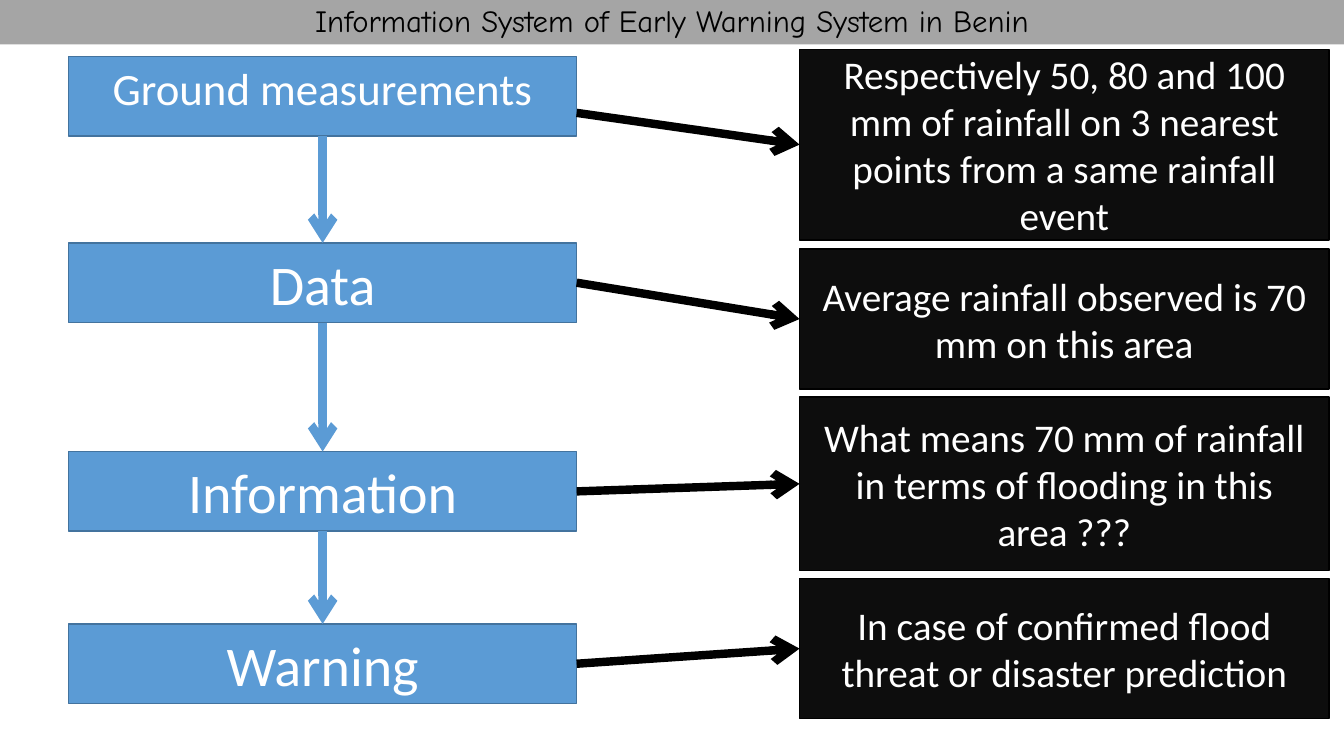
from dataclasses import dataclass

from lxml import etree
from pptx import Presentation
from pptx.dml.color import RGBColor
from pptx.enum import shapes as sh, text as tx
from pptx.oxml import ns
from pptx.util import Inches, Pt

BLUE = RGBColor(0x5B, 0x9B, 0xD5)
BLUE_EDGE = RGBColor(0x43, 0x73, 0x9E)
NEAR_BLACK = RGBColor(0x0D, 0x0D, 0x0D)
BLACK = RGBColor(0, 0, 0)
GREY = RGBColor(0xA5, 0xA5, 0xA5)
WHITE = RGBColor(0xFF, 0xFF, 0xFF)

STEP_LEFT, STEP_WIDTH, STEP_HEIGHT = 0.68, 5.04, 0.79
NOTE_LEFT, NOTE_WIDTH = 7.93, 5.25
TOP, LEFT, BOTTOM, RIGHT = range(4)


@dataclass(frozen=True)
class Stage:
    name: str
    top: float
    note: str
    note_top: float
    note_height: float
    size: int = 40
    spacing: float = 1.0
    arrow_start: float | None = None


STAGES = [
    Stage("Ground measurements", 0.56,
          "Respectively 50, 80 and 100 mm of rainfall on 3 nearest points from a same rainfall event",
          0.49, 1.89, size=32, spacing=0.6, arrow_start=1.12),
    Stage("Data", 2.41, "Average rainfall observed is 70 mm on this area", 2.47, 1.39),
    Stage("Information", 4.48,
          "What means 70 mm of rainfall in terms of flooding in this area ???", 3.94, 1.72),
    Stage("Warning", 6.19, "In case of confirmed flood threat or disaster prediction", 5.74, 1.39),
]


def write(frame, words: str, size: int, font: str, color: RGBColor, spacing: float = 1.0) -> None:
    frame.word_wrap = True
    frame.vertical_anchor = tx.MSO_ANCHOR.MIDDLE
    paragraph = frame.paragraphs[0]
    paragraph.alignment = tx.PP_ALIGN.CENTER
    paragraph.line_spacing = spacing
    run = paragraph.add_run()
    run.text = words
    run.font.size = Pt(size)
    run.font.name = font
    run.font.color.rgb = color


def add_box(slide, left: float, top: float, width: float, height: float,
            fill: RGBColor, edge: RGBColor, words: str, size: int, spacing: float = 1.0):
    box = slide.shapes.add_shape(sh.MSO_SHAPE.RECTANGLE, Inches(left), Inches(top),
                                 Inches(width), Inches(height))
    box.shadow.inherit = False
    box.fill.solid()
    box.fill.fore_color.rgb = fill
    box.line.color.rgb = edge
    box.line.width = Pt(1)
    write(box.text_frame, words, size, "Calibri", WHITE, spacing)
    return box


def add_arrow(slide, source, source_side: int, target, target_side: int,
              color: RGBColor, start: float | None = None) -> None:
    arrow = slide.shapes.add_connector(sh.MSO_CONNECTOR.STRAIGHT, 0, 0, 0, 0)
    if start is None:
        arrow.begin_connect(source, source_side)
    else:
        arrow.begin_x = source.left + source.width
        arrow.begin_y = Inches(start)
    arrow.end_connect(target, target_side)
    arrow.line.color.rgb = color
    arrow.line.width = Pt(6)
    etree.SubElement(arrow.line._get_or_add_ln(), ns.qn("a:tailEnd"), type="arrow")
    etree.SubElement(arrow._element.spPr, ns.qn("a:effectLst"))


def add_title(slide, words: str) -> None:
    title = slide.shapes.title
    title.left, title.top = Inches(0), Inches(-0.03)
    title.width, title.height = Inches(13.33), Inches(0.47)
    title.fill.solid()
    title.fill.fore_color.rgb = GREY
    title.text_frame.auto_size = tx.MSO_AUTO_SIZE.NONE
    write(title.text_frame, words, 22, "Comic Neue", BLACK)


def main() -> None:
    deck = Presentation()
    deck.slide_width, deck.slide_height = Inches(13.33), Inches(7.5)
    slide = deck.slides.add_slide(deck.slide_layouts.get_by_name("Title Only"))
    add_title(slide, "Information System of Early Warning System in Benin")

    previous = None
    for stage in STAGES:
        step = add_box(slide, STEP_LEFT, stage.top, STEP_WIDTH, STEP_HEIGHT,
                       BLUE, BLUE_EDGE, stage.name, stage.size, stage.spacing)
        note = add_box(slide, NOTE_LEFT, stage.note_top, NOTE_WIDTH, stage.note_height,
                       NEAR_BLACK, BLACK, stage.note, 28)
        add_arrow(slide, step, RIGHT, note, LEFT, BLACK, stage.arrow_start)
        if previous is not None:
            add_arrow(slide, previous, BOTTOM, step, TOP, BLUE)
        previous = step

    deck.save("out.pptx")


if __name__ == "__main__":
    main()
